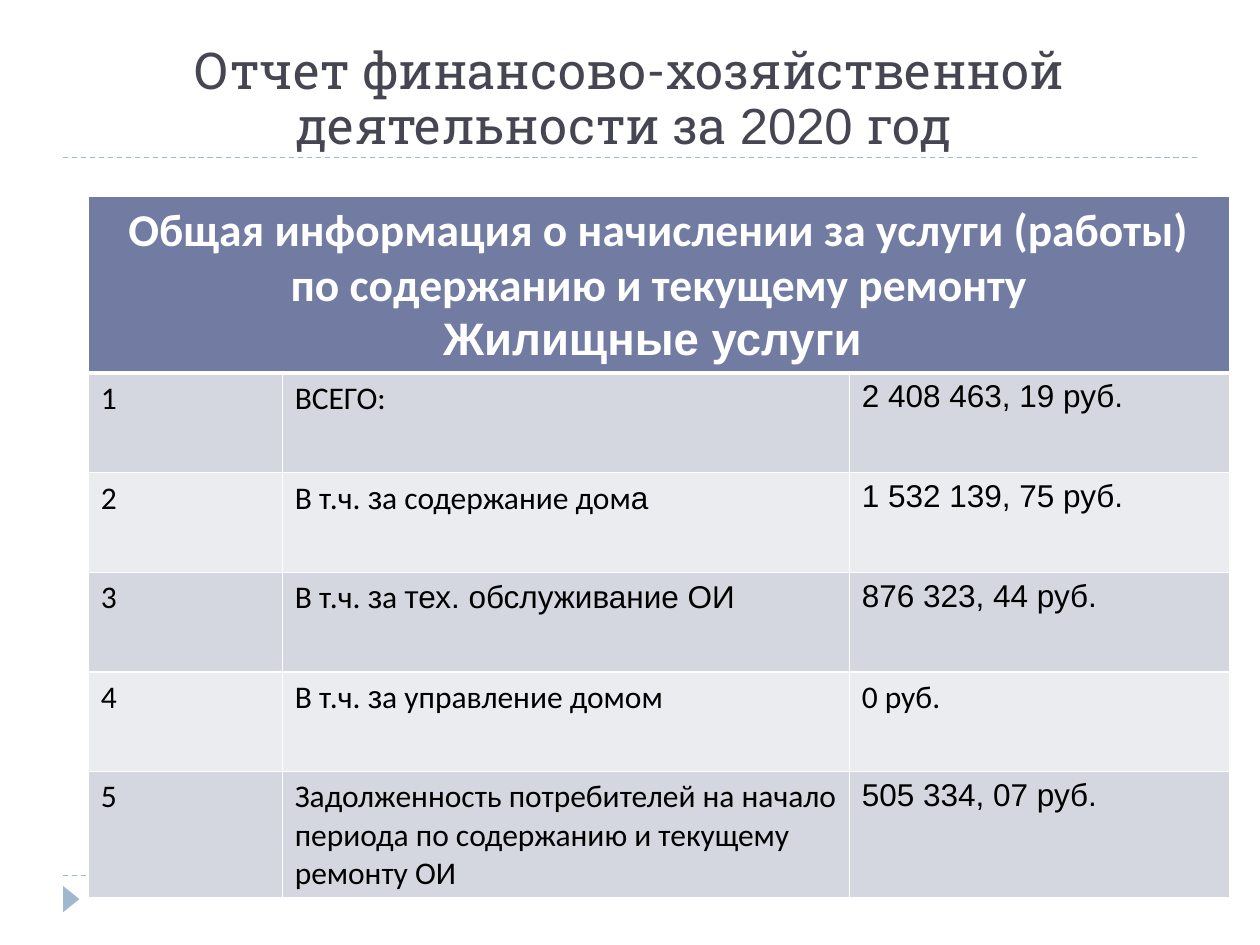
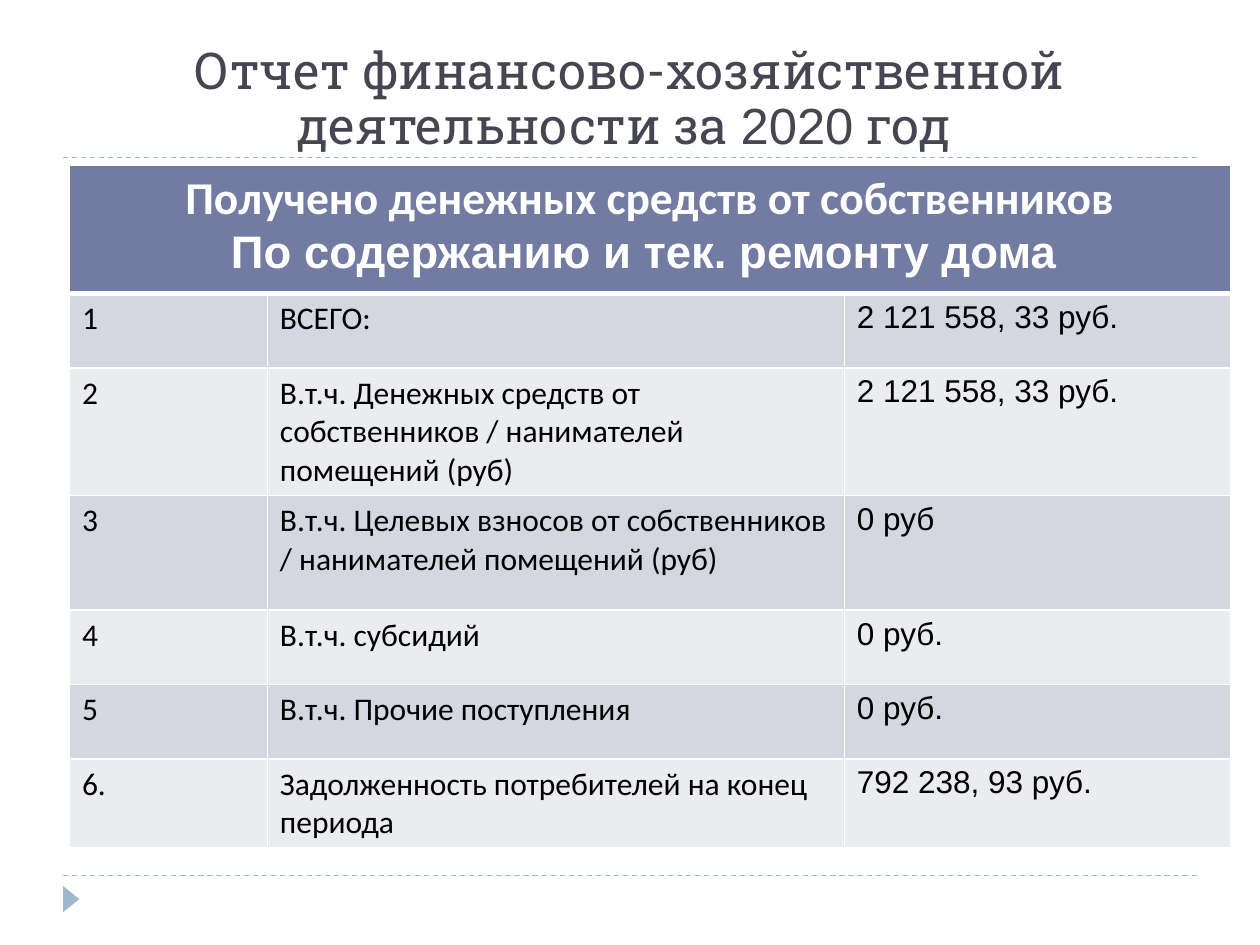
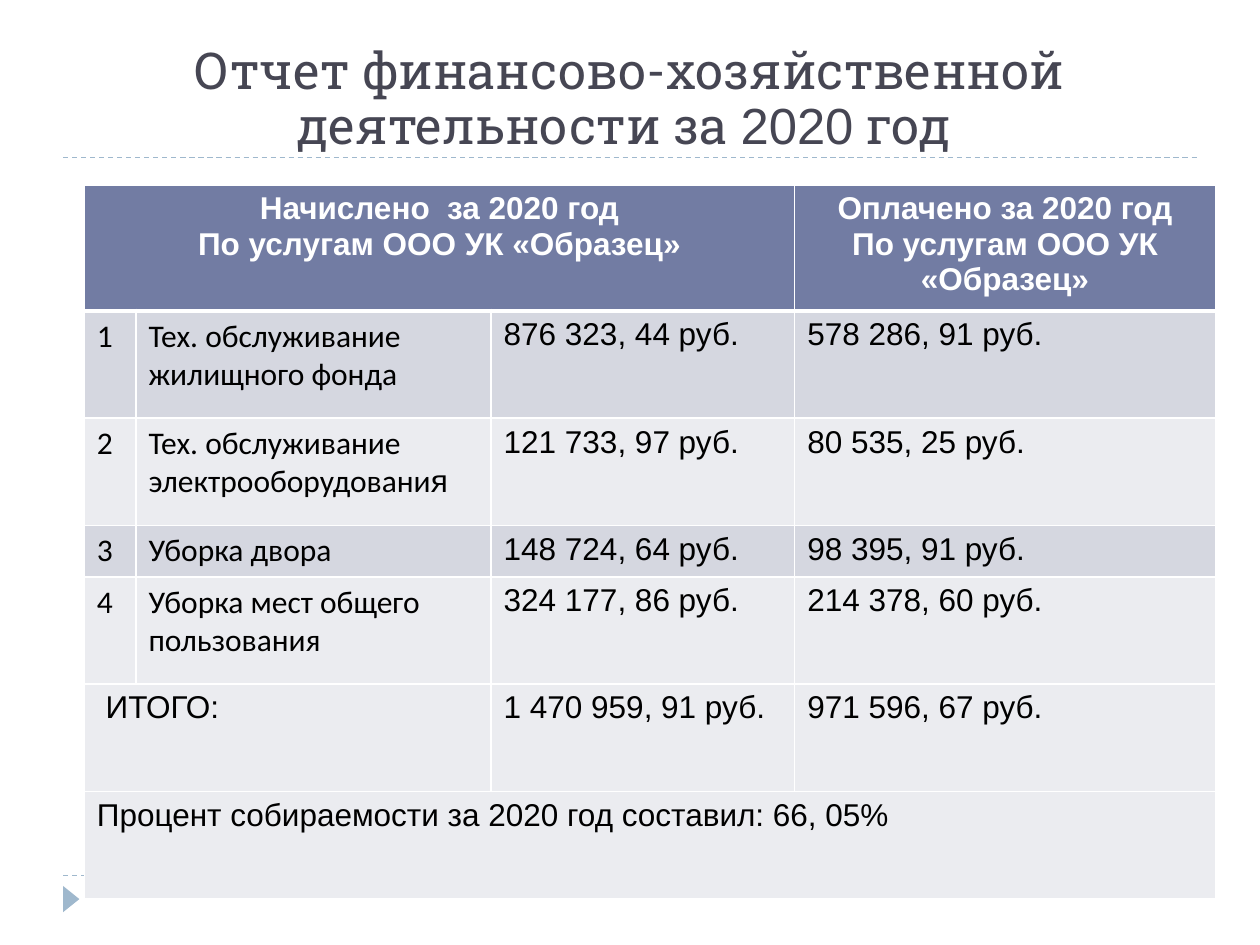
from dataclasses import dataclass
from typing import NamedTuple

import lxml.etree
import pptx
import pptx.dml.color
import pptx.enum.dml
import pptx.enum.shapes
import pptx.enum.text
import pptx.oxml.ns
import pptx.presentation
import pptx.shapes.autoshape
import pptx.slide
import pptx.table
import pptx.text.text
import pptx.util
from pptx.dml.color import RGBColor
from pptx.util import Cm

ACCENT = RGBColor(0x9F, 0xB8, 0xCD)
TITLE_COLOR = RGBColor(0x46, 0x46, 0x53)
HEADER_FILL = RGBColor(0x72, 0x7C, 0xA3)
DARK_BAND = RGBColor(0xD5, 0xD7, 0xE0)
LIGHT_BAND = RGBColor(0xEB, 0xEC, 0xF0)
WHITE = RGBColor(0xFF, 0xFF, 0xFF)
BLACK = RGBColor(0x00, 0x00, 0x00)

TITLE_SIZE = 29
BODY_SIZE = 18
THIN_BORDER = 1
HEADER_BORDER = 3
RULE_HEIGHTS = (17.65, 3.18)


class Run(NamedTuple):
    text: str
    font: str


def calibri(text: str) -> Run:
    return Run(text, "Calibri")


def arial(text: str) -> Run:
    return Run(text, "Arial")


def slab(text: str) -> Run:
    return Run(text, "Roboto Slab")


class Cell(NamedTuple):
    paragraphs: tuple[tuple[Run, ...], ...]
    span: int = 1


class Row(NamedTuple):
    height: float
    cells: tuple[Cell, ...]
    summary: bool = False


class TextStyle(NamedTuple):
    size: int
    color: RGBColor
    bold: bool
    alignment: pptx.enum.text.PP_ALIGN


@dataclass(frozen=True)
class Report:
    title: tuple[Run, ...]
    left: float
    top: float
    widths: tuple[float, ...]
    header_size: int
    rows: tuple[Row, ...]


def line(*runs: Run, span: int = 1) -> Cell:
    return Cell((runs,), span)


def entry(height: float, number: str, label: tuple[Run, ...], *amounts: Run) -> Row:
    return Row(height, (line(calibri(number)), line(*label), *(line(amount) for amount in amounts)))


def title_runs(*year: Run) -> tuple[Run, ...]:
    return (slab("Отчет финансово-хозяйственной деятельности за "), *year)


TITLE = title_runs(arial("2020"), slab(" год "))
COMPANY_LINE = (arial("По услугам ООО УК «Образец»"),)
PER_ITEM = (calibri("В т.ч. "), arial("з"))

REPORTS = (
    Report(
        title=title_runs(arial("2020 "), slab("год ")),
        left=1.78,
        top=3.96,
        widths=(3.91, 11.43, 7.67),
        header_size=26,
        rows=(
            Row(3.56, (Cell((
                (calibri("Общая информация о начислении за услуги (работы) по содержанию и текущему ремонту"),),
                (arial("Жилищные услуги "),),
            ), 3),)),
            entry(2.01, "1", (calibri("ВСЕГО:"),), arial("2 408 463, 19 руб.")),
            entry(2.01, "2", (*PER_ITEM, calibri("а содержание дом"), arial("а")), arial("1 532 139, 75 руб.")),
            entry(2.01, "3", (*PER_ITEM, calibri("а "), arial("тех. обслуживание ОИ")), arial("876 323, 44 руб.")),
            entry(2.01, "4", (*PER_ITEM, calibri("а управление домом")), calibri("0 руб.")),
            entry(
                2.51, "5",
                (calibri("Задолженность потребителей на начало периода по содержанию и текущему ремонту ОИ"),),
                arial("505 334, 07 руб."),
            ),
        ),
    ),
    Report(
        title=TITLE,
        left=1.4,
        top=3.33,
        widths=(3.99, 11.63, 7.8),
        header_size=26,
        rows=(
            Row(2.59, (Cell((
                (calibri("Получено денежных средств от собственников"),),
                (arial("По содержанию и тек. ремонту дома "),),
            ), 3),)),
            entry(1.5, "1", (calibri("ВСЕГО:"),), arial("2 121 558, 33 руб.")),
            entry(
                2.57, "2",
                (calibri("В.т.ч. Денежных средств от собственников / нанимателей помещений (руб)"),),
                arial("2 121 558, 33 руб."),
            ),
            entry(
                2.31, "3",
                (calibri("В.т.ч. Целевых взносов от собственников / нанимателей помещений (руб)"),),
                arial("0 руб"),
            ),
            entry(1.5, "4", (calibri("В.т.ч. субсидий"),), arial("0 руб.")),
            entry(1.5, "5", (calibri("В.т.ч. Прочие поступления"),), arial("0 руб.")),
            entry(1.78, "6.", (calibri("Задолженность потребителей на конец периода"),), arial("792 238, 93 руб.")),
        ),
    ),
    Report(
        title=TITLE,
        left=1.7,
        top=3.73,
        widths=(1.04, 7.16, 6.12, 8.48),
        header_size=18,
        rows=(
            Row(2.34, (
                Cell(((arial("Начислено  за 2020 год"),), COMPANY_LINE), 3),
                Cell(((arial("Оплачено за 2020 год"),), COMPANY_LINE)),
            )),
            entry(
                2.16, "1", (calibri("Тех. обслуживание жилищного фонда"),),
                arial("876 323, 44 руб."), arial("578 286, 91 руб."),
            ),
            entry(
                2.16, "2", (calibri("Тех. обслуживание электрооборудовани"), arial("я")),
                arial("121 733, 97 руб."), arial("80 535, 25 руб."),
            ),
            entry(1.04, "3", (calibri("Уборка двора"),), arial("148 724, 64 руб."), arial("98 395, 91 руб.")),
            entry(
                2.16, "4", (calibri("Уборка мест общего пользования"),),
                arial("324 177, 86 руб."), arial("214 378, 60 руб."),
            ),
            Row(2.16, (
                line(arial(" ИТОГО:"), span=2),
                line(arial("1 470 959, 91 руб.")),
                line(arial("971 596, 67 руб.")),
            ), summary=True),
            Row(2.16, (line(arial("Процент собираемости за 2020 год составил: 66, 05%"), span=4),), summary=True),
        ),
    ),
)


def write_paragraph(paragraph: pptx.text.text._Paragraph, runs: tuple[Run, ...], style: TextStyle) -> None:
    paragraph.text = runs[0].text
    for extra in runs[1:]:
        paragraph.add_run().text = extra.text
    paragraph.alignment = style.alignment
    for written, run in zip(paragraph.runs, runs):
        written.font.name = run.font
        written.font.size = pptx.util.Pt(style.size)
        written.font.bold = style.bold
        written.font.color.rgb = style.color


def draw_frame(slide: pptx.slide.Slide) -> None:
    for height in RULE_HEIGHTS:
        rule = slide.shapes.add_connector(
            pptx.enum.shapes.MSO_CONNECTOR.STRAIGHT, Cm(1.27), Cm(height), Cm(24.13), Cm(height)
        )
        rule.line.color.rgb = ACCENT
        rule.line.width = pptx.util.Pt(0.75)
        rule.line.dash_style = pptx.enum.dml.MSO_LINE.DASH
        lxml.etree.SubElement(rule._element.spPr, pptx.oxml.ns.qn("a:effectLst"))
    marker = slide.shapes.add_shape(
        pptx.enum.shapes.MSO_SHAPE.ISOSCELES_TRIANGLE, Cm(1.17), Cm(17.96), Cm(0.53), Cm(0.33)
    )
    marker.rotation = 90
    marker.shadow.inherit = False
    marker.fill.solid()
    marker.fill.fore_color.rgb = ACCENT
    marker.line.fill.background()


def draw_title(slide: pptx.slide.Slide, runs: tuple[Run, ...]) -> None:
    text_frame = slide.shapes.add_textbox(Cm(1.27), Cm(0.64), Cm(22.86), Cm(2.54)).text_frame
    text_frame.word_wrap = True
    text_frame.vertical_anchor = pptx.enum.text.MSO_ANCHOR.BOTTOM
    text_frame.margin_top = Cm(0)
    text_frame.margin_bottom = Cm(0.05)
    paragraph = text_frame.paragraphs[0]
    write_paragraph(paragraph, runs, TextStyle(TITLE_SIZE, TITLE_COLOR, False, pptx.enum.text.PP_ALIGN.CENTER))
    paragraph.line_spacing = 0.9


def set_borders(table_cell: pptx.table._Cell, top: int, bottom: int) -> None:
    properties = table_cell._tc.get_or_add_tcPr()
    widths = {"lnL": THIN_BORDER, "lnR": THIN_BORDER, "lnT": top, "lnB": bottom}
    for tag, width in widths.items():
        border = lxml.etree.SubElement(
            properties, pptx.oxml.ns.qn(f"a:{tag}"), w=str(pptx.util.Pt(width))
        )
        fill = lxml.etree.SubElement(border, pptx.oxml.ns.qn("a:solidFill"))
        lxml.etree.SubElement(fill, pptx.oxml.ns.qn("a:srgbClr"), val=str(WHITE))


def row_fill(index: int, row: Row) -> RGBColor:
    if index == 0:
        return HEADER_FILL
    return DARK_BAND if index % 2 and not row.summary else LIGHT_BAND


def fill_row(table: pptx.table.Table, index: int, row: Row, style: TextStyle) -> None:
    table.rows[index].height = Cm(row.height)
    for column in range(len(table.columns)):
        table_cell = table.cell(index, column)
        set_borders(
            table_cell,
            top=HEADER_BORDER if index == 1 else THIN_BORDER,
            bottom=HEADER_BORDER if index == 0 else THIN_BORDER,
        )
        table_cell.fill.solid()
        table_cell.fill.fore_color.rgb = row_fill(index, row)
    column = 0
    for cell in row.cells:
        table_cell = table.cell(index, column)
        if cell.span > 1:
            table_cell.merge(table.cell(index, column + cell.span - 1))
        text_frame = table_cell.text_frame
        for position, runs in enumerate(cell.paragraphs):
            paragraph = text_frame.add_paragraph() if position else text_frame.paragraphs[0]
            write_paragraph(paragraph, runs, style)
        column += cell.span


def draw_table(slide: pptx.slide.Slide, report: Report) -> None:
    table = slide.shapes.add_table(
        len(report.rows),
        len(report.widths),
        Cm(report.left),
        Cm(report.top),
        Cm(sum(report.widths)),
        Cm(sum(row.height for row in report.rows)),
    ).table
    table.first_row = False
    table.horz_banding = False
    for column, width in zip(table.columns, report.widths):
        column.width = Cm(width)
    header_style = TextStyle(report.header_size, WHITE, True, pptx.enum.text.PP_ALIGN.CENTER)
    body_style = TextStyle(BODY_SIZE, BLACK, False, pptx.enum.text.PP_ALIGN.LEFT)
    for index, row in enumerate(report.rows):
        fill_row(table, index, row, body_style if index else header_style)


def main() -> None:
    presentation = pptx.Presentation()
    presentation.slide_width = Cm(25.4)
    presentation.slide_height = Cm(19.05)
    for report in REPORTS:
        slide = presentation.slides.add_slide(presentation.slide_layouts[6])
        draw_frame(slide)
        draw_title(slide, report.title)
        draw_table(slide, report)
    presentation.save("out.pptx")


if __name__ == "__main__":
    main()
